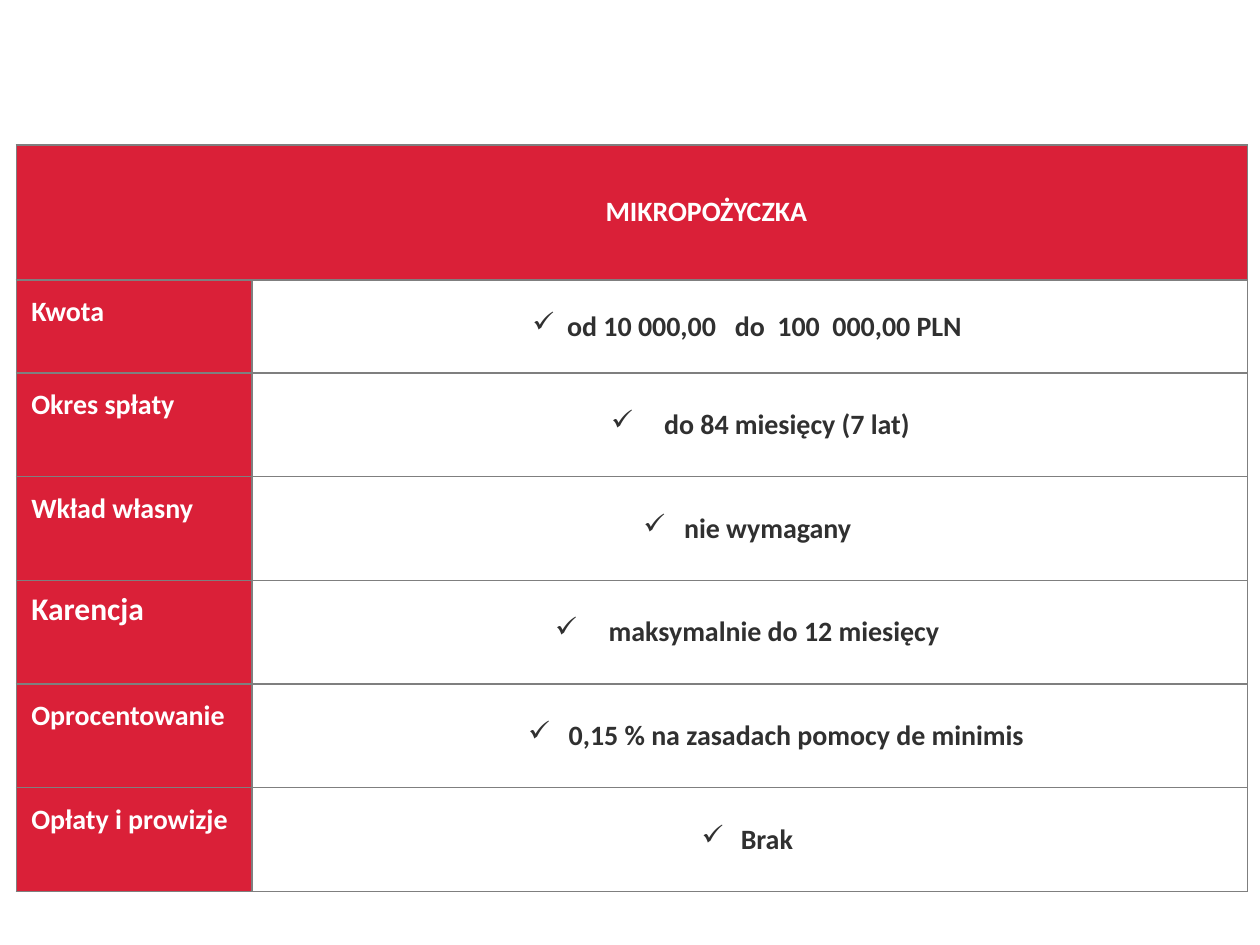
"""Build the loan terms slide: a red header band above a table of conditions."""
from lxml import etree
from pptx import Presentation, util as u
from pptx.dml.color import RGBColor
from pptx.enum import text
from pptx.oxml import ns

COLORS = {"red": "DA2038", "white": "FFFFFF", "dark": "303030", "line": "7F7F7F"}
LEFT, HEADER_TOP, HEADER_HEIGHT = 0.33, 2.92, 2.72
TERMS_TOP = HEADER_TOP + HEADER_HEIGHT
FIRST_ROW, OTHER_ROWS = 1.88, 2.09
HEADER_COLUMNS = [3.56, 20.4, 0.86]
TERM_COLUMNS = [4.75, 20.07]

terms = [
    ("Kwota", 16, "od 10 000,00   do  100  000,00 PLN", 0.7, 0.7),
    ("Okres spłaty", 16, "do 84 miesięcy (7 lat)", 1.6, 1.07),
    ("Wkład własny", 16, "nie wymagany", 0.82, 0.82),
    ("Karencja", 18, "maksymalnie do 12 miesięcy", 1.08, 1.08),
    ("Oprocentowanie", 16, "0,15 % na zasadach pomocy de minimis", 1.98, 0.82),
    ("Opłaty i prowizje", 16, "Brak", 0.79, 0.79),
]


def add_grid(slide, top, columns, rows):
    frame = slide.shapes.add_table(
        len(rows), len(columns), u.Cm(LEFT), u.Cm(top), u.Cm(sum(columns)), u.Cm(sum(rows)))
    grid = frame.table
    grid.first_row = grid.horz_banding = False
    for column, width in zip(grid.columns, columns):
        column.width = u.Cm(width)
    for row, height in zip(grid.rows, rows):
        row.height = u.Cm(height)
    return grid


def style_cell(cell, fill, wording="", size=16, color="white", align=None,
               anchor=text.MSO_ANCHOR.TOP, margin=0, hanging=0, sides="LRTB"):
    cell.margin_left, cell.margin_top = u.Cm(0.3), u.Cm(0.2)
    cell.margin_right, cell.margin_bottom = u.Cm(0.4), u.Cm(0.3)
    cell.vertical_anchor = anchor
    properties = cell._tc.get_or_add_tcPr()
    for side in "LRTB":
        border = etree.SubElement(properties, ns.qn(f"a:ln{side}"), w=str(u.Pt(1)))
        if side in sides:
            paint = etree.SubElement(border, ns.qn("a:solidFill"))
            etree.SubElement(paint, ns.qn("a:srgbClr"), val=COLORS["line"])
        else:
            etree.SubElement(border, ns.qn("a:noFill"))
    cell.fill.solid()
    cell.fill.fore_color.rgb = RGBColor.from_string(COLORS[fill])
    paragraph = cell.text_frame.paragraphs[0]
    paragraph.text = wording
    paragraph.alignment = align
    paragraph.line_spacing = 1.0 if size == 18 else 1.15
    indents = paragraph._p.get_or_add_pPr()
    indents.set("marL", str(u.Cm(margin)))
    indents.set("indent", str(-u.Cm(hanging)))
    if hanging:
        etree.SubElement(indents, ns.qn("a:buChar"), char="✓")
    for run in paragraph.runs:
        run.font.name, run.font.size, run.font.bold = "Calibri", u.Pt(size), True
        run.font.color.rgb = RGBColor.from_string(COLORS[color])


presentation = Presentation()
presentation.slide_width, presentation.slide_height = u.Cm(25.4), u.Cm(19.05)
slide = presentation.slides.add_slide(presentation.slide_layouts[6])
centre, middle = text.PP_ALIGN.CENTER, text.MSO_ANCHOR.MIDDLE

conditions = add_grid(slide, TERMS_TOP, TERM_COLUMNS,
                      [FIRST_ROW] + [OTHER_ROWS] * (len(terms) - 1))
for row, (label, size, condition, margin, hanging) in enumerate(terms):
    style_cell(conditions.cell(row, 0), "red", label, size)
    style_cell(conditions.cell(row, 1), "white", condition, color="dark", align=centre,
               anchor=middle, margin=margin, hanging=hanging)

header = add_grid(slide, HEADER_TOP, HEADER_COLUMNS, [HEADER_HEIGHT])
for column, (wording, sides) in enumerate([("", "LTB"), ("MIKROPOŻYCZKA", "TB"), ("", "RTB")]):
    style_cell(header.cell(0, column), "red", wording, align=centre, anchor=middle,
               margin=0.4, sides=sides)

presentation.save("out.pptx")
